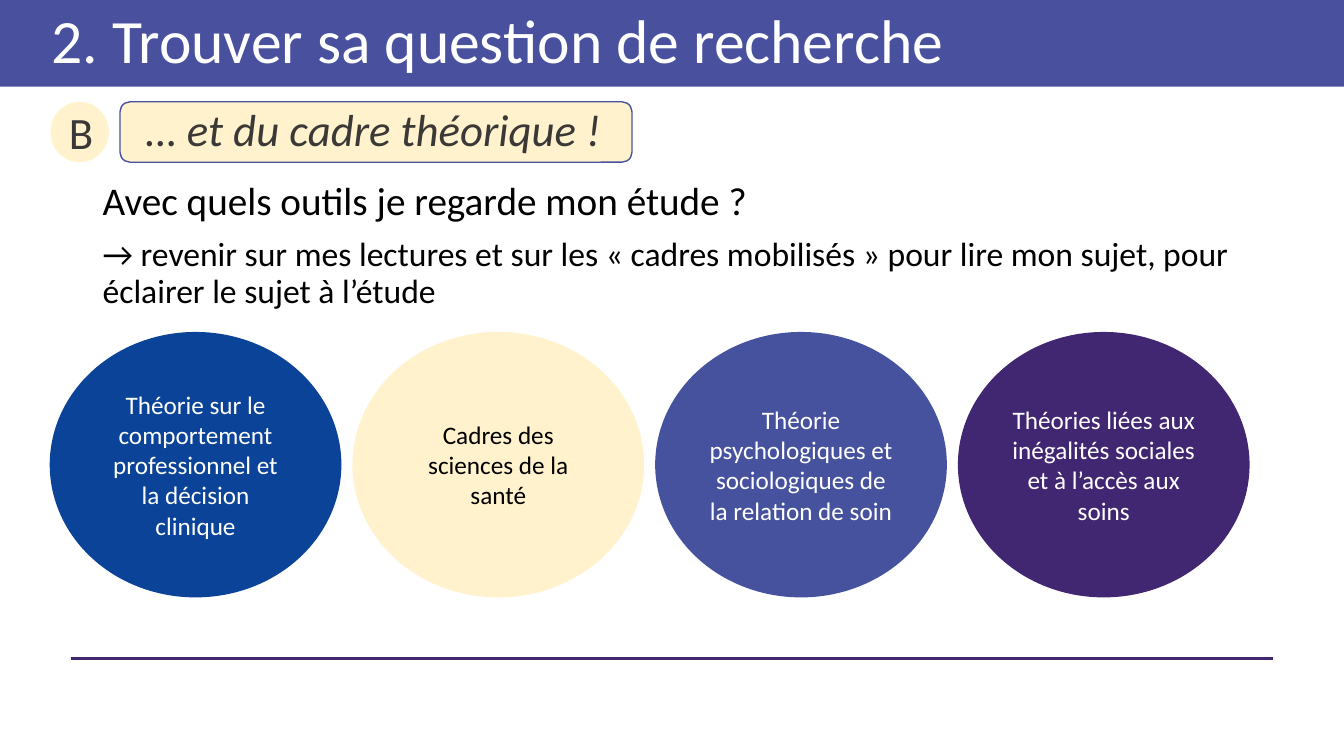
"""Build the slide on choosing a theoretical framework for a research question."""
from lxml import etree
from pptx import Presentation
from pptx.dml.color import RGBColor
from pptx.enum import shapes, text
from pptx.oxml import ns
from pptx.util import Pt

WHITE = RGBColor(0xFF, 0xFF, 0xFF)
BLACK = RGBColor(0, 0, 0)
CHARCOAL = RGBColor(0x3B, 0x38, 0x38)
INDIGO = RGBColor(0x49, 0x51, 0x9E)
SLATE = RGBColor(0x47, 0x52, 0x9E)
NAVY = RGBColor(0x0A, 0x43, 0x98)
CREAM = RGBColor(0xFF, 0xF2, 0xCC)
PURPLE = RGBColor(0x41, 0x26, 0x72)
FONT = "Calibri"

TITLE = "2. Trouver sa question de recherche"
LETTER = "B"
SUBTITLE = "… et du cadre théorique !"
BODY = [
    ("Avec quels outils je regarde mon étude ?", 28),
    ("→ revenir sur mes lectures et sur les « cadres mobilisés » pour lire mon sujet, "
     "pour éclairer le sujet à l’étude", 24),
]
THEORIES = [
    ("Théorie sur le comportement professionnel et la décision clinique", NAVY, WHITE),
    ("Cadres des sciences de la santé", CREAM, BLACK),
    ("Théorie psychologiques et sociologiques de la relation de soin", SLATE, WHITE),
    ("Théories liées aux inégalités sociales et à l’accès aux soins", PURPLE, WHITE),
]
WIDTH, HEIGHT = 960, 540
LEFT = 36
THEORY_TOP, THEORY_W, THEORY_H, THEORY_STEP = 237.6, 207.36, 188.64, 216.24
BADGE_TOP, BADGE_H = 72.72, 43.2


def add_figure(slide, preset, box, fill, line=None):
    figure = slide.shapes.add_shape(preset, *map(Pt, box))
    figure.shadow.inherit = False
    figure.fill.solid()
    figure.fill.fore_color.rgb = fill
    if line is None:
        figure.line.fill.background()
    else:
        figure.line.color.rgb = line
        figure.line.width = Pt(1)
    return figure


def write(paragraph, words, size, color, align=text.PP_ALIGN.LEFT, spacing=None):
    paragraph.text = words
    paragraph.alignment = align
    paragraph.line_spacing = spacing
    paragraph.font.name = FONT
    paragraph.font.size = Pt(size)
    paragraph.font.color.rgb = color


def add_text_box(slide, box):
    frame = slide.shapes.add_textbox(*map(Pt, box)).text_frame
    frame.word_wrap = True
    return frame


def main():
    deck = Presentation()
    deck.slide_width, deck.slide_height = Pt(WIDTH), Pt(HEIGHT)
    slide = deck.slides.add_slide(deck.slide_layouts[6])
    oval = shapes.MSO_SHAPE.OVAL
    center = text.PP_ALIGN.CENTER

    footer_rule = slide.shapes.add_connector(
        shapes.MSO_CONNECTOR.STRAIGHT, Pt(50.4), Pt(470.16), Pt(909.36), Pt(470.16))
    footer_rule.line.color.rgb = PURPLE
    footer_rule.line.width = Pt(2.25)
    etree.SubElement(footer_rule._element.spPr, ns.qn("a:effectLst"))

    banner = add_figure(slide, shapes.MSO_SHAPE.RECTANGLE, (0, 0, WIDTH, 61.92), INDIGO, INDIGO)
    banner.line.fill.background()
    banner.text_frame.margin_left = Pt(37)
    banner.text_frame.vertical_anchor = text.MSO_ANCHOR.MIDDLE
    write(banner.text_frame.paragraphs[0], TITLE, 44, WHITE, spacing=0.9)

    add_figure(slide, shapes.MSO_SHAPE.ROUNDED_RECTANGLE,
               (85.68, BADGE_TOP, 365.76, BADGE_H), CREAM, INDIGO)
    subtitle = add_text_box(slide, (97.2, 69.12, 340.56, 46.08))
    subtitle.auto_size = text.MSO_AUTO_SIZE.SHAPE_TO_FIT_TEXT
    write(subtitle.paragraphs[0], SUBTITLE, 32, CHARCOAL)
    subtitle.paragraphs[0].font.italic = True

    badge = add_figure(slide, oval, (LEFT, BADGE_TOP, 41.76, BADGE_H), CREAM)
    badge.text_frame.vertical_anchor = text.MSO_ANCHOR.MIDDLE
    write(badge.text_frame.paragraphs[0], LETTER, 32, CHARCOAL, center)

    body = add_text_box(slide, (66.24, 126, 828, 342))
    for index, (words, size) in enumerate(BODY):
        paragraph = body.add_paragraph() if index else body.paragraphs[0]
        write(paragraph, words, size, BLACK, spacing=0.9)
        if index:
            paragraph.space_before = Pt(10)

    for index, (words, fill, color) in enumerate(THEORIES):
        box = (LEFT + index * THEORY_STEP, THEORY_TOP, THEORY_W, THEORY_H)
        theory = add_figure(slide, oval, box, fill, fill)
        theory.text_frame.vertical_anchor = text.MSO_ANCHOR.MIDDLE
        write(theory.text_frame.paragraphs[0], words, 18, color, center)

    deck.save("out.pptx")


if __name__ == "__main__":
    main()
